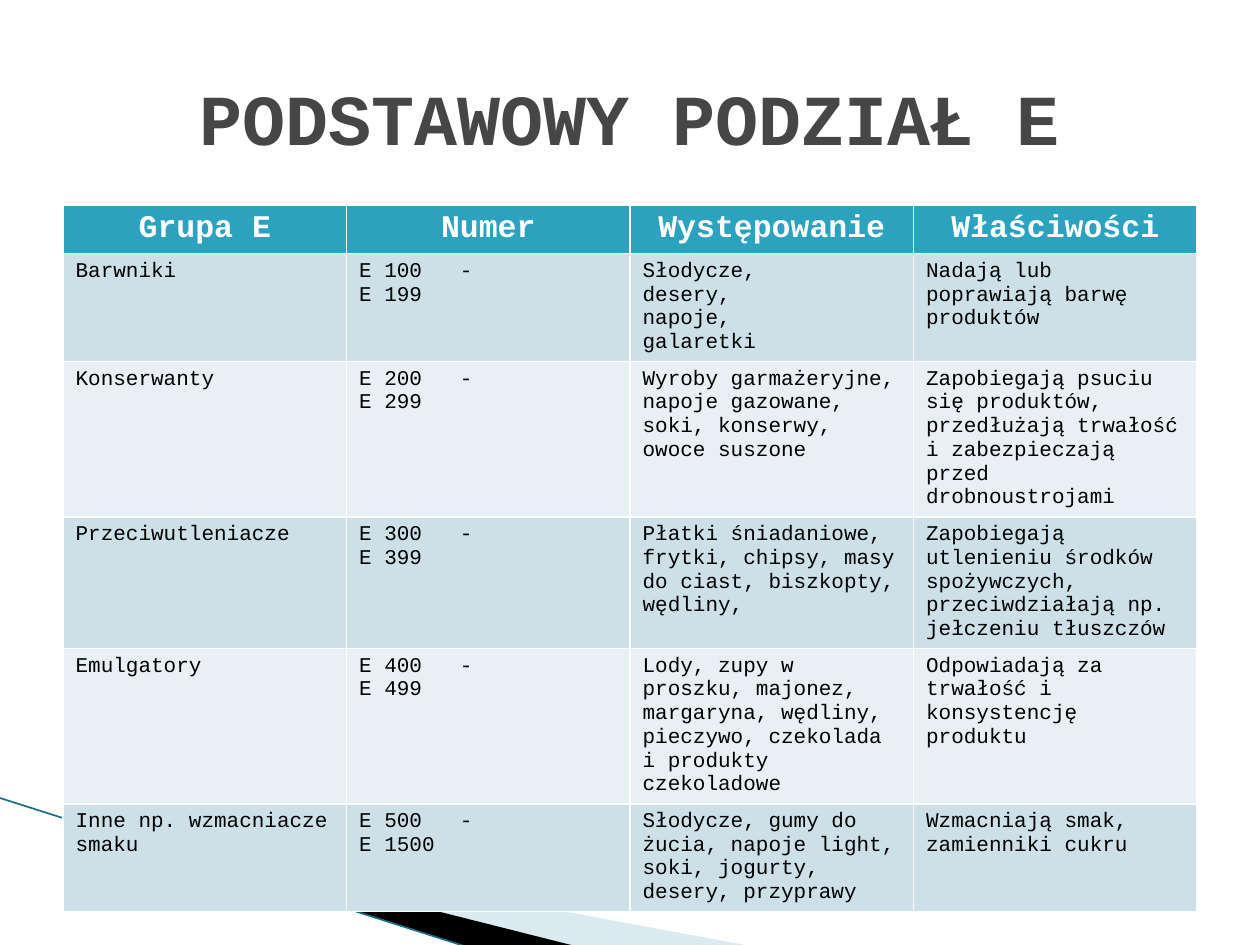
"""Build the slide with the table of E-number food additive groups."""
from lxml import etree
from pptx import Presentation
from pptx.dml.color import RGBColor
from pptx.enum import shapes, text
from pptx.oxml.ns import qn
from pptx.util import Pt

COLORS = {"title": "464646", "header": "2DA2BF", "white": "FFFFFF", "text": "000000",
          "odd": "CDE0E8", "even": "E8F0F4", "pale": "A0CBDC", "line": "1B6F84"}
FONT = "Courier New"
HEADERS = ["Grupa E", "Numer", "Występowanie", "Właściwości"]
GROUPS = [
    ["Barwniki", "E 100\t-\nE 199", "Słodycze,\ndesery,\nnapoje,\ngalaretki",
     "Nadają lub poprawiają barwę produktów"],
    ["Konserwanty", "E 200\t-\nE 299",
     "Wyroby garmażeryjne, napoje gazowane, soki, konserwy, owoce suszone",
     "Zapobiegają psuciu się produktów, przedłużają trwałość i zabezpieczają przed drobnoustrojami"],
    ["Przeciwutleniacze", "E 300\t-\nE 399",
     "Płatki śniadaniowe, frytki, chipsy, masy do ciast, biszkopty, wędliny,",
     "Zapobiegają utlenieniu środków spożywczych, przeciwdziałają np. jełczeniu tłuszczów"],
    ["Emulgatory", "E 400\t-\nE 499",
     "Lody, zupy w proszku, majonez, margaryna, wędliny, pieczywo, czekolada i produkty czekoladowe",
     "Odpowiadają za trwałość i konsystencję produktu"],
    ["Inne np. wzmacniacze smaku", "E 500\t-\nE 1500",
     "Słodycze, gumy do żucia, napoje light, soki, jogurty, desery, przyprawy",
     "Wzmacniają smak, zamienniki cukru"],
]
ROW_HEIGHTS = [28, 61.6, 88.8, 75.2, 88.8, 61.6]
TAB_STOP = 57.6


def rgb(name):
    return RGBColor.from_string(COLORS[name])


def add_run(p, words, size, color, bold):
    r = p.add_run()
    r.text = words
    r.font.name = FONT
    r.font.size = Pt(size)
    r.font.bold = bold
    r.font.color.rgb = rgb(color)


prs = Presentation()
prs.slide_width, prs.slide_height = Pt(720), Pt(540)
s = prs.slides.add_slide(prs.slide_layouts[5])

wedges = [("pale", [(39.6, 468.5), (428.4, 540.5), (328.3, 540.5), (39.6, 468)]),
          ("text", [(38.2, 467.3), (329, 540.7), (267.8, 541.4), (38.9, 468)])]
for color, points in wedges:
    corners = [(Pt(x), Pt(y)) for x, y in points]
    fb = s.shapes.build_freeform(*corners[0])
    fb.add_line_segments(corners[1:], close=True)
    sp = fb.convert_to_shape()
    sp.shadow.inherit = False
    sp.fill.solid()
    sp.fill.fore_color.rgb = rgb(color)
    sp.line.fill.background()
    if color == "pale":
        clr = next(sp._element.spPr.iter(qn("a:srgbClr")))
        etree.SubElement(clr, qn("a:alpha")).set("val", "40000")

line = s.shapes.add_connector(shapes.MSO_CONNECTOR.STRAIGHT,
                              Pt(-0.7), Pt(455.8), Pt(267.8), Pt(541.4))
line.line.color.rgb = rgb("line")
line.line.width = Pt(0.95)
etree.SubElement(line._element.spPr, qn("a:effectLst"))

table = s.shapes.add_table(6, 4, Pt(36), Pt(117), Pt(648), Pt(sum(ROW_HEIGHTS))).table
for row, height in zip(table.rows, ROW_HEIGHTS):
    row.height = Pt(height)
for i, values in enumerate([HEADERS] + GROUPS):
    for j, value in enumerate(values):
        cell = table.cell(i, j)
        cell.fill.solid()
        cell.fill.fore_color.rgb = rgb("header" if i == 0 else "odd" if i % 2 else "even")
        tf = cell.text_frame
        for k, words in enumerate(value.split("\n")):
            p = tf.paragraphs[0] if k == 0 else tf.add_paragraph()
            if "\t" in words:
                tabs = etree.SubElement(p._p.get_or_add_pPr(), qn("a:tabLst"))
                tab = etree.SubElement(tabs, qn("a:tab"))
                tab.set("pos", str(Pt(TAB_STOP)))
                tab.set("algn", "l")
            if i == 0:
                p.alignment = text.PP_ALIGN.CENTER
                add_run(p, words, 18, "white", True)
            else:
                add_run(p, words, 12, "text", False)

title = s.shapes.title
title.left, title.top, title.width, title.height = Pt(36), Pt(21.6), Pt(648), Pt(90)
tf = title.text_frame
tf.vertical_anchor = text.MSO_ANCHOR.MIDDLE
p = tf.paragraphs[0]
p.alignment = text.PP_ALIGN.CENTER
add_run(p, "PODSTAWOWY PODZIAŁ E", 41, "title", True)

prs.save("out.pptx")
